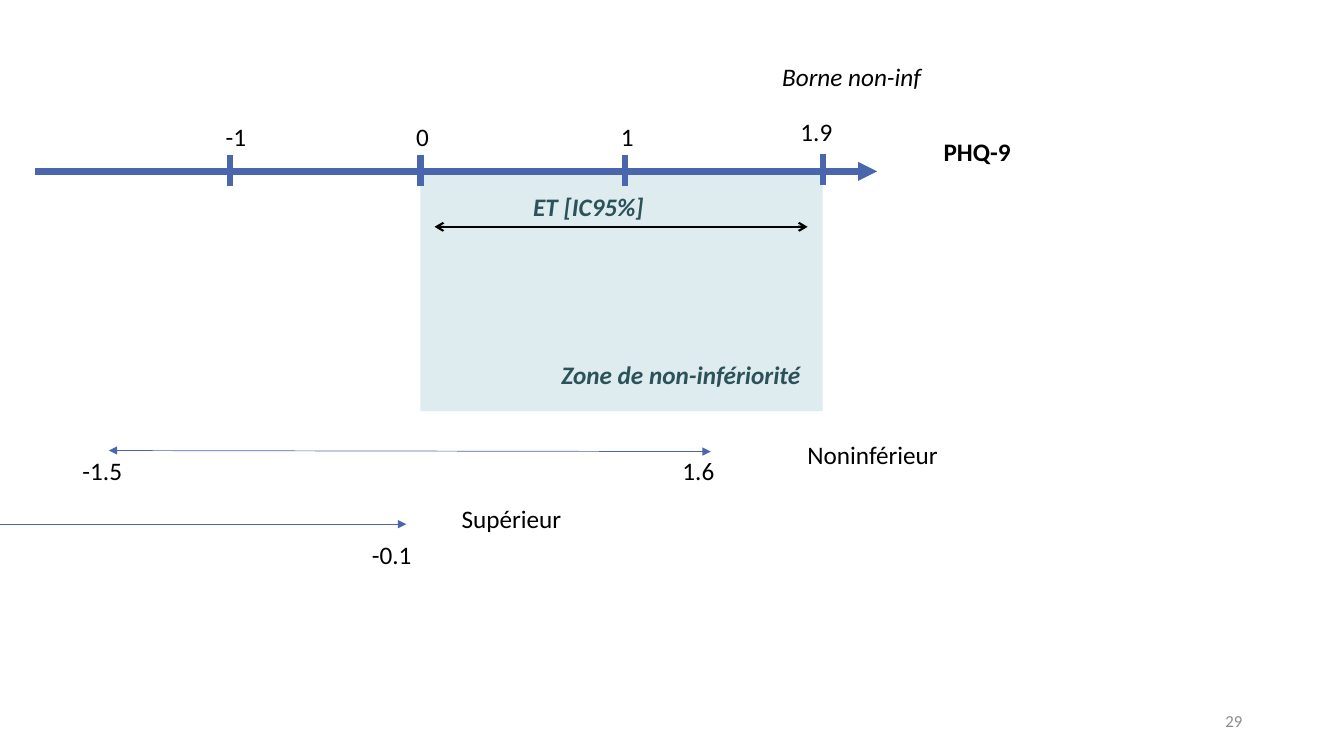
from lxml.etree import SubElement
from pptx import Presentation
from pptx.dml.color import RGBColor
from pptx.enum.shapes import MSO_CONNECTOR, MSO_SHAPE
from pptx.enum.text import MSO_ANCHOR, MSO_AUTO_SIZE, PP_ALIGN
from pptx.oxml.ns import qn
from pptx.util import Inches, Pt

BLUE, TEAL, BLACK, GREY = "4A66AC", "2B5259", "000000", "8C8C8C"
color = RGBColor.from_string

deck = Presentation()
deck.slide_width, deck.slide_height = Inches(13.33), Inches(7.5)
page = deck.slides.add_slide(deck.slide_layouts[6])


def add_line(start, end, hue, weight, head=None, tail=None):
    line = page.shapes.add_connector(
        MSO_CONNECTOR.STRAIGHT, *[Inches(v) for v in (*start, *end)])
    line.line.color.rgb = color(hue)
    line.line.width = Pt(weight)
    stroke = line.line._get_or_add_ln()
    for tag, kind in (("a:headEnd", head), ("a:tailEnd", tail)):
        if kind:
            SubElement(stroke, qn(tag), type=kind)
    SubElement(line._element.spPr, qn("a:effectLst"))


def add_label(text, left, top, width, hue=BLACK, size=18, bold=False,
              italic=False, wrap=True):
    box = page.shapes.add_textbox(
        Inches(left), Inches(top), Inches(width), Inches(0.4))
    box.text_frame.word_wrap = wrap
    box.text_frame.auto_size = MSO_AUTO_SIZE.SHAPE_TO_FIT_TEXT
    span = box.text_frame.paragraphs[0].add_run()
    span.text = text
    span.font.name, span.font.size = "Calibri", Pt(size)
    span.font.bold, span.font.italic = bold, italic
    span.font.color.rgb = color(hue)
    return box


# Non-inferiority zone
zone = page.shapes.add_shape(
    MSO_SHAPE.RECTANGLE, Inches(4.17), Inches(1.71), Inches(3.99), Inches(2.37))
zone.shadow.inherit = False
zone.fill.solid()
zone.fill.fore_color.rgb = color("DEECEF")
zone.line.fill.background()
add_line((4.31, 2.25), (8.01, 2.25), BLACK, 1.5, "arrow", "arrow")
add_label("ET [IC95%]", 5.19, 1.85, 1.47, TEAL, bold=True, italic=True)
add_label("Zone de non-infériorité", 5.47, 3.52, 3.24, TEAL, bold=True, italic=True)

# PHQ-9 axis with its ticks
add_line((0.35, 1.7), (8.7, 1.7), BLUE, 4.5, tail="triangle")
add_label("PHQ-9", 9.26, 1.3, 2.55, bold=True)
add_label("Borne non-inf", 7.66, 0.56, 2.09, italic=True)
for text, tick, bottom, left, top, width in (
        ("-1", 2.28, 1.85, 2.14, 1.15, 0.67),
        ("0", 4.17, 1.85, 4.03, 1.15, 0.28),
        ("1", 6.2, 1.85, 6.06, 1.15, 0.28),
        ("1.9", 8.16, 1.84, 7.84, 1.1, 0.86)):
    add_line((tick, bottom), (tick, bottom - 0.31), BLUE, 4.5)
    add_label(text, left, top, width)

# Confidence intervals
for start, end in (((7.05, 4.48), (1.08, 4.47)), ((4.03, 5.2), (-0.22, 5.2))):
    add_line(start, end, BLUE, 0.5, "triangle", "triangle")
for text, left, top, width in (
        ("-1.5", 0.72, 4.47, 0.6),
        ("1.6", 6.67, 4.47, 0.52),
        ("Noninférieur", 7.91, 4.31, 1.51),
        ("Supérieur", 4.48, 4.94, 1.2),
        ("-0.1", 3.59, 5.3, 0.6)):
    add_label(text, left, top, width, wrap=False)

# Page number
number = add_label("29", 9.42, 6.95, 3, GREY, size=12)
number.text_frame.auto_size = MSO_AUTO_SIZE.NONE
number.text_frame.vertical_anchor = MSO_ANCHOR.MIDDLE
number.text_frame.paragraphs[0].alignment = PP_ALIGN.RIGHT

deck.save("out.pptx")
